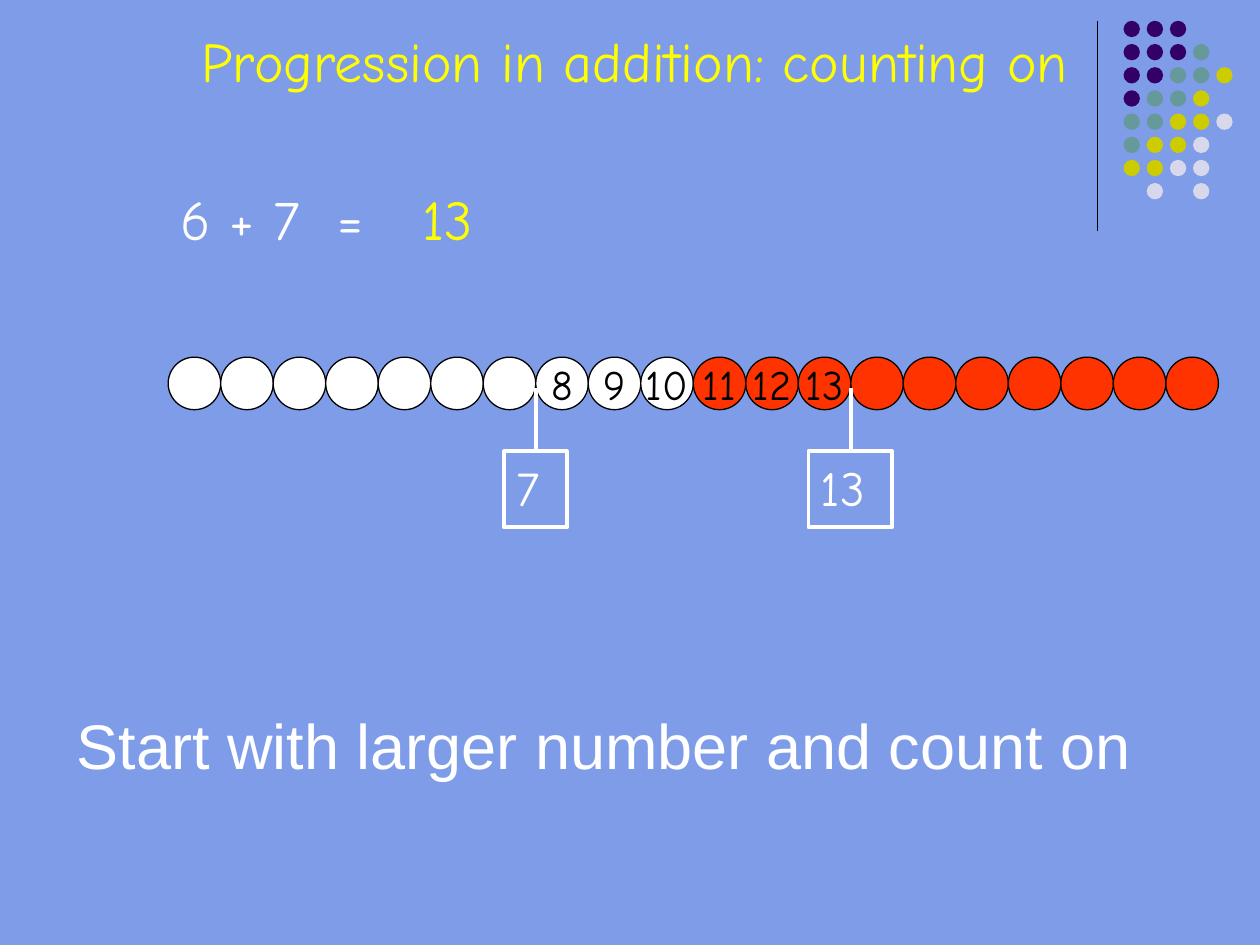
from lxml import etree
from pptx import Presentation
from pptx.dml.color import RGBColor
from pptx.enum.shapes import MSO_CONNECTOR, MSO_SHAPE
from pptx.enum.text import MSO_ANCHOR, MSO_AUTO_SIZE, PP_ALIGN
from pptx.oxml.ns import qn
from pptx.util import Cm, Pt

OVAL, RECT = MSO_SHAPE.OVAL, MSO_SHAPE.RECTANGLE
STRAIGHT = MSO_CONNECTOR.STRAIGHT
LEFT, CENTER = PP_ALIGN.LEFT, PP_ALIGN.CENTER
MIDDLE = MSO_ANCHOR.MIDDLE
GROW, FIXED = MSO_AUTO_SIZE.SHAPE_TO_FIT_TEXT, MSO_AUTO_SIZE.NONE

SKY = RGBColor(0x7E, 0x9C, 0xE8)
BLACK = RGBColor(0x00, 0x00, 0x00)
WHITE = RGBColor(0xFF, 0xFF, 0xFF)
YELLOW = RGBColor(0xFF, 0xFF, 0x00)
RED = RGBColor(0xFF, 0x33, 0x00)
PURPLE = RGBColor(0x33, 0x00, 0x66)
TEAL = RGBColor(0x66, 0x99, 0x99)
OLIVE = RGBColor(0xCC, 0xCC, 0x00)
LILAC = RGBColor(0xD8, 0xD8, 0xEC)

HAND, SANS = "Comic Neue", "Arial"
DOT_COLOURS = {"P": PURPLE, "T": TEAL, "O": OLIVE, "L": LILAC}
DOT_ROWS = ["PPP", "PPPT", "PPTTO", "PTTO", "TTOOL", "TOOL", "OOLL", " L L"]
DOT_SIZE = 0.33
BEAD_COUNT, WHITE_BEADS = 20, 10
START, TOTAL = 7, 13


def write(shape, text, size, colour, font=HAND, align=LEFT):
    frame = shape.text_frame
    frame.text = text
    paragraph = frame.paragraphs[0]
    paragraph.alignment = align
    formats = {"name": font, "size": Pt(size)}
    for attribute, value in formats.items():
        setattr(paragraph.font, attribute, value)
    paragraph.font.color.rgb = colour
    return frame


def add_label(slide, box, text, size, colour, font=HAND, align=LEFT):
    label = slide.shapes.add_textbox(*map(Cm, box))
    frame = write(label, text, size, colour, font, align)
    frame.word_wrap = True
    frame.auto_size = GROW


def add_outlined(shapes, kind, box, fill=None, line=None, width=0.75):
    shape = shapes.add_shape(kind, *map(Cm, box))
    shape.shadow.inherit = False
    if fill is None:
        shape.fill.background()
    else:
        shape.fill.solid()
        shape.fill.fore_color.rgb = fill
    if line is None:
        shape.line.fill.background()
    else:
        shape.line.color.rgb = line
        shape.line.width = Pt(width)
    return shape


def add_vertical(slide, x, top, bottom, colour, width):
    rule = slide.shapes.add_connector(STRAIGHT, Cm(x), Cm(top), Cm(x), Cm(bottom))
    rule.line.color.rgb = colour
    rule.line.width = Pt(width)
    properties = rule._element.find(qn("p:spPr"))
    etree.SubElement(properties, qn("a:effectLst"))


def add_corner_dots(slide, left, top, height):
    """Dot pattern, evenly spaced in both directions."""
    pitch = (height - DOT_SIZE) / (len(DOT_ROWS) - 1)
    dots = slide.shapes.add_group_shape()
    for row, codes in enumerate(DOT_ROWS):
        for column, code in enumerate(codes):
            if code in DOT_COLOURS:
                box = (left + column * pitch, top + row * pitch, DOT_SIZE, DOT_SIZE)
                add_outlined(dots.shapes, OVAL, box, DOT_COLOURS[code])


def add_bead_string(slide, left, top, width):
    """Touching beads; those counted on carry their number."""
    bead_size = width / BEAD_COUNT
    for number in range(1, BEAD_COUNT + 1):
        fill = WHITE if number <= WHITE_BEADS else RED
        box = (left + (number - 1) * bead_size, top, bead_size, bead_size)
        bead = add_outlined(slide.shapes, OVAL, box, fill, BLACK)
        if START < number <= TOTAL:
            frame = write(bead, str(number), 24, BLACK, align=CENTER)
            formats = {"word_wrap": False, "vertical_anchor": MIDDLE, "auto_size": FIXED}
            for attribute, value in formats.items():
                setattr(frame, attribute, value)


def add_marker(slide, number, stem_x, left, top, width, height):
    """Boxed number below the bead string, with its stem."""
    add_vertical(slide, stem_x, top - 1.27, top, WHITE, 2.25)
    box = (left, top, width, height)
    marker = add_outlined(slide.shapes, RECT, box, line=WHITE, width=2.25)
    frame = write(marker, str(number), 28, WHITE)
    formats = {"word_wrap": True, "vertical_anchor": MSO_ANCHOR.TOP, "auto_size": GROW}
    for attribute, value in formats.items():
        setattr(frame, attribute, value)


def main():
    deck = Presentation()
    deck.slide_width, deck.slide_height = Cm(25.4), Cm(19.05)
    slide = deck.slides.add_slide(deck.slide_layouts[6])
    slide.background.fill.solid()
    slide.background.fill.fore_color.rgb = SKY

    # Corner decoration
    add_vertical(slide, 22.12, 0.42, 4.65, BLACK, 0.75)
    add_corner_dots(slide, 22.65, 0.42, 3.6)

    # Title and sum
    add_label(slide, (0.42, 0.42, 24.77, 1.6),
              "Progression in addition: counting on", 32, YELLOW, align=CENTER)
    add_label(slide, (3.39, 3.6, 5.08, 1.6), "6 + 7  =", 32, WHITE)
    add_label(slide, (8.26, 3.6, 5.08, 1.6), str(TOTAL), 32, YELLOW)

    # Bead string with start and end markers
    string_left, string_width = 3.39, 21.17
    add_bead_string(slide, string_left, 7.2, string_width)
    for number, left, width in ((START, 10.16, 1.27), (TOTAL, 16.3, 1.69)):
        stem_x = string_left + number * string_width / BEAD_COUNT
        add_marker(slide, number, stem_x, left, 9.1, width, 1.53)

    # Instruction
    add_label(slide, (1.3, 14.12, 23.27, 1.8),
              "Start with larger number and count on", 36, WHITE, SANS)

    deck.save("out.pptx")


if __name__ == "__main__":
    main()
